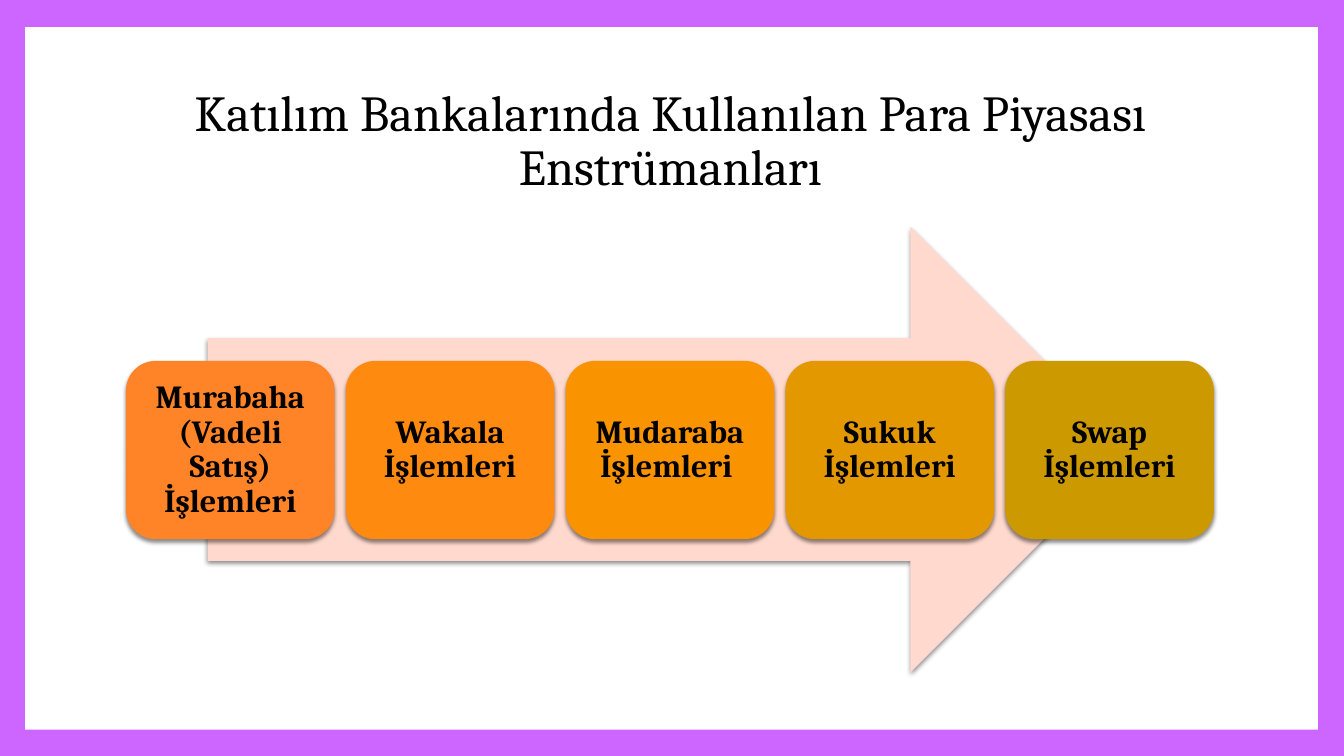
import pptx
import pptx.dml.color
import pptx.enum.shapes
import pptx.enum.text
import pptx.oxml
import pptx.oxml.ns
import pptx.util

Inches = pptx.util.Inches
Shape = pptx.enum.shapes.MSO_SHAPE

SHADOW = (
    f'<a:outerShdw {pptx.oxml.ns.nsdecls("a")} blurRad="38100" dist="25400" dir="5400000" rotWithShape="0">'
    '<a:srgbClr val="000000"><a:alpha val="45000"/></a:srgbClr></a:outerShdw>'
)


def add_filled_shape(kind, left, top, width, height, color, shadow=True):
    shape = slide.shapes.add_shape(kind, Inches(left), Inches(top), Inches(width), Inches(height))
    shape.fill.solid()
    shape.fill.fore_color.rgb = pptx.dml.color.RGBColor.from_string(color)
    shape.line.fill.background()
    shape.shadow.inherit = False
    if shadow:
        effects = shape.element.spPr.find(pptx.oxml.ns.qn("a:effectLst"))
        effects.append(pptx.oxml.parse_xml(SHADOW))
    return shape


def write_centred(shape, text, size, bold):
    frame = shape.text_frame
    frame.text = text
    frame.word_wrap = True
    frame.auto_size = pptx.enum.text.MSO_AUTO_SIZE.NONE
    frame.vertical_anchor = pptx.enum.text.MSO_ANCHOR.MIDDLE
    paragraph = frame.paragraphs[0]
    paragraph.alignment = pptx.enum.text.PP_ALIGN.CENTER
    paragraph.line_spacing = 0.9
    font = paragraph.runs[0].font
    font.name = "Cambria"
    font.size = pptx.util.Pt(size)
    font.bold = bold
    font.color.rgb = pptx.dml.color.RGBColor.from_string("000000")


presentation = pptx.Presentation()
presentation.slide_width = Inches(13.33)
presentation.slide_height = Inches(7.5)
slide = presentation.slides.add_slide(presentation.slide_layouts[5])
slide.background.fill.solid()
slide.background.fill.fore_color.rgb = pptx.dml.color.RGBColor.from_string("CC66FF")

# Title on the white panel
title = slide.shapes.title
title.left, title.top = Inches(1.25), Inches(0.67)
title.width, title.height = Inches(10.8), Inches(1.48)
write_centred(title, "Katılım Bankalarında Kullanılan Para Piyasası Enstrümanları", 36, False)
panel = add_filled_shape(Shape.RECTANGLE, 0.25, 0.27, 12.82, 6.97, "FFFFFF", shadow=False)
title.element.addprevious(panel.element)

# Arrow with the five instruments in a row
add_filled_shape(Shape.RIGHT_ARROW, 2.06, 2.25, 9.18, 4.42, "FFD9CD")

instruments = [
    ("Murabaha (Vadeli Satış) İşlemleri", "FF8427"),
    ("Wakala İşlemleri", "FF8A10"),
    ("Mudaraba İşlemleri ", "F99300"),
    ("Sukuk İşlemleri", "E39800"),
    ("Swap İşlemleri", "CC9900"),
]
row_left, row_top, column_step = 1.25, 3.58, 2.18
box_width, box_height, inset = 2.07, 1.77, 0.19

for column, (label, color) in enumerate(instruments):
    left = row_left + column * column_step
    box = add_filled_shape(Shape.ROUNDED_RECTANGLE, left, row_top, box_width, box_height, color)
    write_centred(box, label, 23, True)
    # The rounded corners already add 0.09 inch of inset to the text area
    frame = box.text_frame
    frame.margin_left = frame.margin_right = Inches(inset - 0.09)
    frame.margin_top = frame.margin_bottom = Inches(inset - 0.09)

presentation.save("out.pptx")
